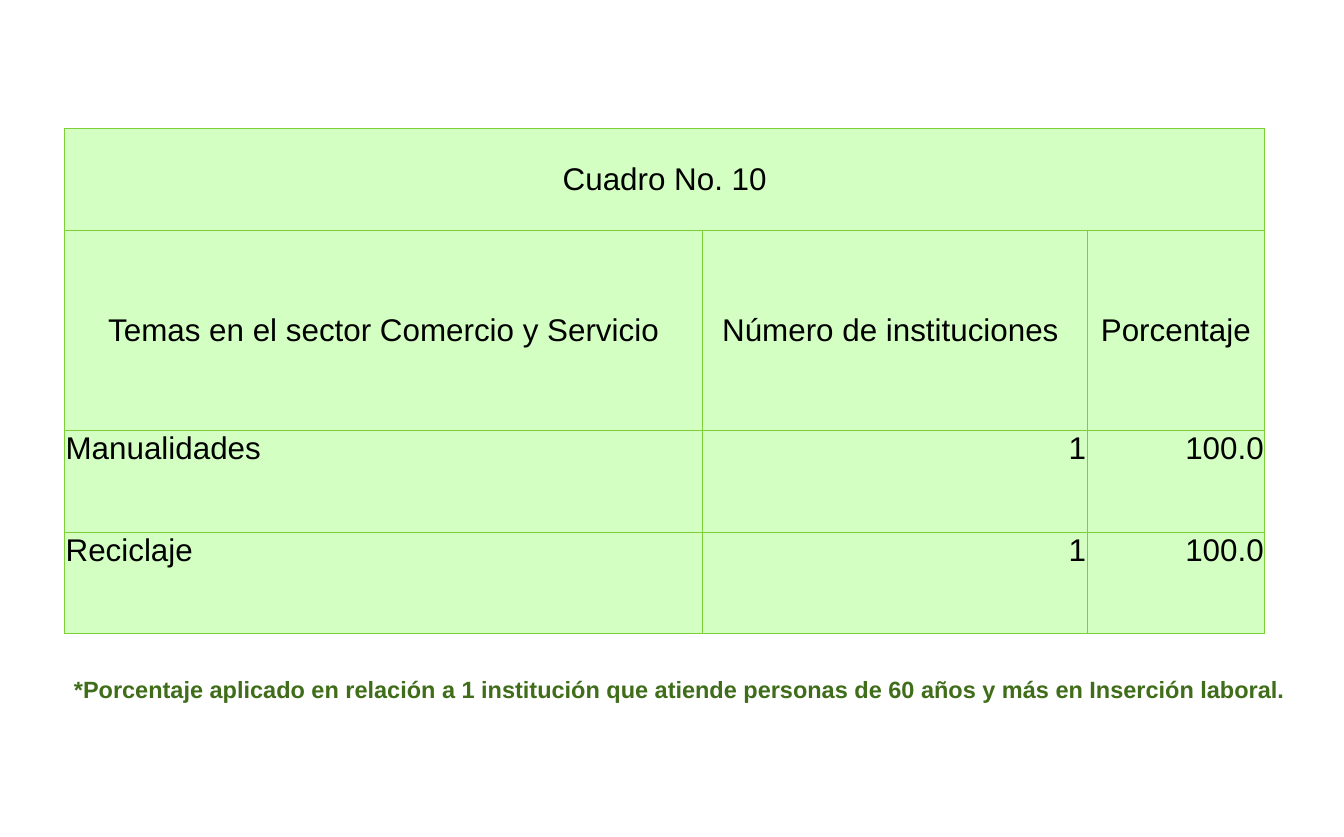
from dataclasses import dataclass

from lxml import etree
from pptx import Presentation
from pptx.dml.color import RGBColor
from pptx.enum import text
from pptx.oxml import ns
from pptx.util import Pt


@dataclass(frozen=True)
class Theme:
    font: str = "Arial"
    table_size: int = 24
    note_size: int = 18
    ink: str = "000000"
    note: str = "3F6D19"
    fill: str = "D3FFC2"
    border: str = "7CD036"
    border_width: float = 0.75


theme = Theme()


def style_paragraph(para, size, color, align, bold=False):
    para.alignment = align
    para.font.name = theme.font
    para.font.size = Pt(size)
    para.font.bold = bold
    para.font.color.rgb = RGBColor.from_string(color)


def add_borders(cell):
    properties = cell._tc.get_or_add_tcPr()
    for side in ("lnL", "lnR", "lnT", "lnB"):
        line = etree.SubElement(properties, ns.qn(f"a:{side}"), w=str(Pt(theme.border_width)))
        fill = etree.SubElement(line, ns.qn("a:solidFill"))
        etree.SubElement(fill, ns.qn("a:srgbClr"), val=theme.border)


deck = Presentation()
deck.slide_width, deck.slide_height = Pt(1028.88), Pt(640.8)
page = deck.slides.add_slide(deck.slide_layouts[6])

# Table: a merged caption, column heads and two data rows
column_widths = [488.16, 294.48, 136.08]
row_heights = [77.76, 153.36, 77.76, 77.76]
rows = [
    ["Cuadro No. 10", "", ""],
    ["Temas en el sector Comercio y Servicio", "Número de instituciones ", "Porcentaje"],
    ["Manualidades", "1", "100.0"],
    ["Reciclaje", "1", "100.0"],
]
header_rows = 2

table = page.shapes.add_table(
    len(rows), len(column_widths), Pt(49.5), Pt(98.5),
    Pt(sum(column_widths)), Pt(sum(row_heights)),
).table
for column, width in zip(table.columns, column_widths):
    column.width = Pt(width)
for row, height in zip(table.rows, row_heights):
    row.height = Pt(height)
table.cell(0, 0).merge(table.cell(0, len(column_widths) - 1))

for r, values in enumerate(rows):
    for c, value in enumerate(values):
        cell = table.cell(r, c)
        cell.margin_left = cell.margin_right = cell.margin_top = Pt(0.75)
        cell.margin_bottom = 0
        add_borders(cell)
        cell.fill.solid()
        cell.fill.fore_color.rgb = RGBColor.from_string(theme.fill)
        if cell.is_spanned:
            continue
        if r < header_rows:
            cell.vertical_anchor = text.MSO_ANCHOR.MIDDLE
            align = text.PP_ALIGN.CENTER
        else:
            cell.vertical_anchor = text.MSO_ANCHOR.TOP
            align = text.PP_ALIGN.RIGHT if c else text.PP_ALIGN.LEFT
        cell.text = value
        style_paragraph(cell.text_frame.paragraphs[0], theme.table_size, theme.ink, align)

# Footnote
note_box = page.shapes.add_textbox(Pt(49.5), Pt(513.5), Pt(947), Pt(29))
note_box.text_frame.word_wrap = True
note_box.text_frame.auto_size = text.MSO_AUTO_SIZE.SHAPE_TO_FIT_TEXT
note = note_box.text_frame.paragraphs[0]
note.text = (
    "*Porcentaje aplicado en relación a 1 institución que atiende "
    "personas de 60 años y más en Inserción laboral."
)
style_paragraph(note, theme.note_size, theme.note, text.PP_ALIGN.LEFT, bold=True)

deck.save("out.pptx")
